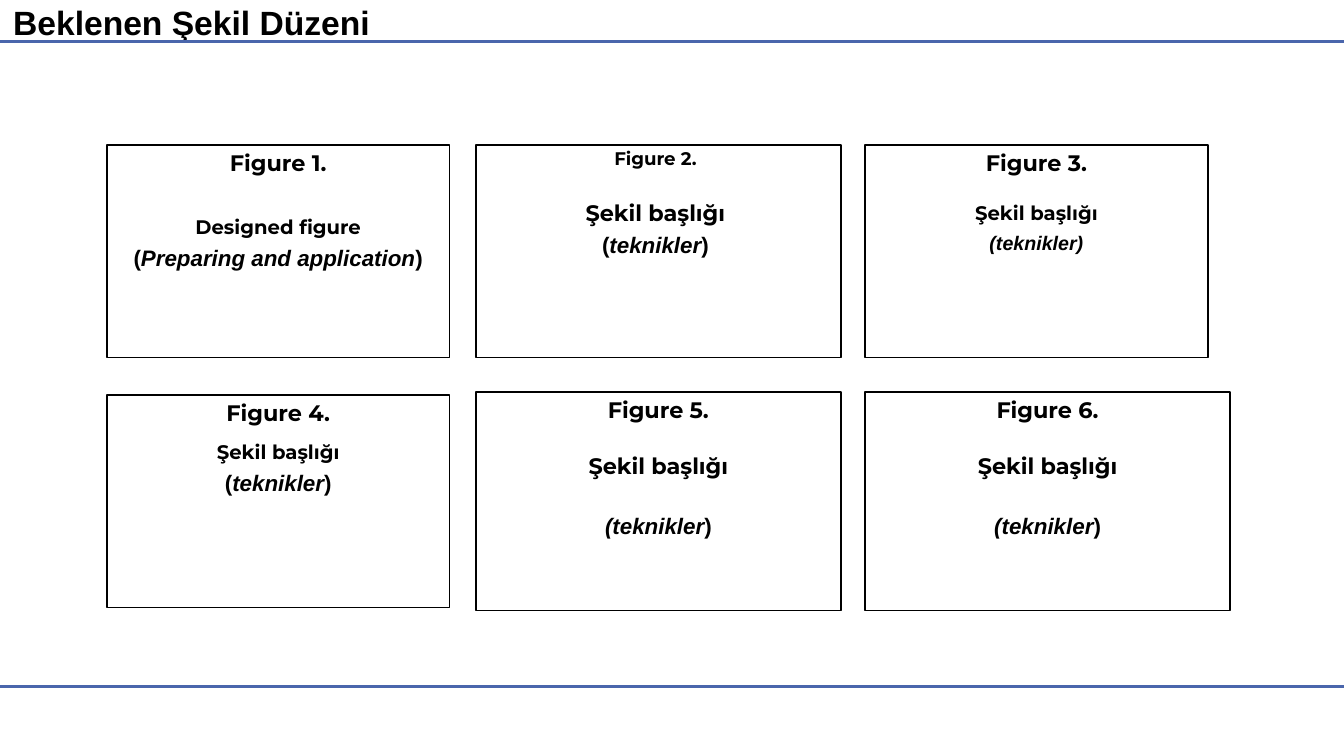
import pptx
import pptx.dml.color
import pptx.enum.shapes
import pptx.enum.text
import pptx.oxml
import pptx.util
from pptx.util import Inches

SLIDE_WIDTH, SLIDE_HEIGHT = 13.33, 7.5
BLACK, WHITE, BLUE = "000000", "FFFFFF", "4A66AC"
HEADING_FONT, BODY_FONT = "Montserrat", "Arial"
CENTER = pptx.enum.text.PP_ALIGN.CENTER
LEFT = pptx.enum.text.PP_ALIGN.LEFT


def color(hex_code):
    return pptx.dml.color.RGBColor.from_string(hex_code)


def add_run(paragraph, text, size=16, font=BODY_FONT, italic=False):
    """Append bold black text with the given format."""
    run = paragraph.add_run()
    run.text = text
    run.font.size = pptx.util.Pt(size)
    run.font.name = font
    run.font.bold = True
    run.font.italic = italic
    run.font.color.rgb = color(BLACK)


def set_margins(frame, left, top, right, bottom):
    frame.margin_left, frame.margin_top = Inches(left), Inches(top)
    frame.margin_right, frame.margin_bottom = Inches(right), Inches(bottom)


def add_rule(slide, top):
    rule = slide.shapes.add_connector(
        pptx.enum.shapes.MSO_CONNECTOR.STRAIGHT,
        Inches(0), Inches(top), Inches(SLIDE_WIDTH), Inches(top))
    rule.line.color.rgb = color(BLUE)
    rule.line.width = pptx.util.Pt(2.25)
    properties = rule.element.spPr
    properties.append(properties.makeelement(pptx.oxml.ns.qn("a:effectLst"), {}))


def set_title(slide, text):
    title = slide.shapes.title
    title.left, title.top = Inches(0.03), Inches(-0.03)
    title.width, title.height = Inches(3.77), Inches(0.5)
    frame = title.text_frame
    frame.word_wrap = False
    frame.auto_size = pptx.enum.text.MSO_AUTO_SIZE.NONE
    frame.vertical_anchor = pptx.enum.text.MSO_ANCHOR.TOP
    set_margins(frame, 0.1, 0.05, 0.1, 0.05)
    frame.paragraphs[0].alignment = LEFT
    add_run(frame.paragraphs[0], text, size=24)


def add_panel(slide, left, top, width, height, lines, margins):
    """Add a framed box; each line is (space after, runs)."""
    panel = slide.shapes.add_shape(
        pptx.enum.shapes.MSO_SHAPE.RECTANGLE,
        Inches(left), Inches(top), Inches(width), Inches(height))
    panel.shadow.inherit = False
    panel.fill.solid()
    panel.fill.fore_color.rgb = color(WHITE)
    panel.line.color.rgb = color(BLACK)
    panel.line.width = pptx.util.Pt(1)
    frame = panel.text_frame
    frame.word_wrap = True
    frame.vertical_anchor = pptx.enum.text.MSO_ANCHOR.TOP
    set_margins(frame, *margins)
    for index, (space_after, runs) in enumerate(lines):
        paragraph = frame.add_paragraph() if index else frame.paragraphs[0]
        paragraph.alignment = CENTER
        paragraph.line_spacing = 0.9
        paragraph.space_before = pptx.util.Pt(0)
        paragraph.space_after = pptx.util.Pt(space_after)
        for text, run_format in runs:
            add_run(paragraph, text, **run_format)


def heading(text, size, space_after):
    return space_after, [(text, {"size": size, "font": HEADING_FONT})]


def technique(*parts, size=16):
    """Last line of a panel, from (text, italic) parts."""
    return 0, [(text, {"size": size, "italic": italic}) for text, italic in parts]


def main():
    presentation = pptx.Presentation()
    presentation.slide_width = Inches(SLIDE_WIDTH)
    presentation.slide_height = Inches(SLIDE_HEIGHT)
    slide = presentation.slides.add_slide(presentation.slide_layouts[5])

    # Title and horizontal rules
    for top in (0.41, 6.81):
        add_rule(slide, top)
    set_title(slide, "Beklenen Şekil Düzeni")

    # Closing lines of the panels
    caption = "Şekil başlığı"
    application = technique(("(", False), ("Preparing and application", True), (")", False))
    upright = technique(("(", False), ("teknikler", True), (")", False))
    small = technique(("(teknikler)", True), size=14)
    slanted = technique(("(teknikler", True), (")", False))

    # Panels: top, width, height, heading size and gap, caption, its size and gap, closing line
    panels = [
        (1.44, 3.4, 2.11, 16, 29.5, "Designed figure", 14, 6, application),
        (1.44, 3.62, 2.11, 13, 23, caption, 16, 6, upright),
        (1.44, 3.4, 2.11, 16, 19.7, caption, 14, 6, small),
        (3.92, 3.4, 2.11, 16, 11.4, caption, 14, 6, upright),
        (3.89, 3.62, 2.17, 16, 23, caption, 16, 25.2, slanted),
        (3.89, 3.62, 2.17, 16, 23, caption, 16, 25.2, slanted),
    ]
    column_lefts = (1.06, 4.72, 8.58)
    tight_margins = {2: (0.05, 0.05, 0.11, 0.05)}
    for number, panel in enumerate(panels, start=1):
        top, width, height, size, gap, text, text_size, text_gap, closing = panel
        lines = [heading(f"Figure {number}.", size, gap),
                 heading(text, text_size, text_gap), closing]
        add_panel(slide, column_lefts[(number - 1) % 3], top, width, height, lines,
                  tight_margins.get(number, (0.07,) * 4))

    presentation.save("out.pptx")


if __name__ == "__main__":
    main()
